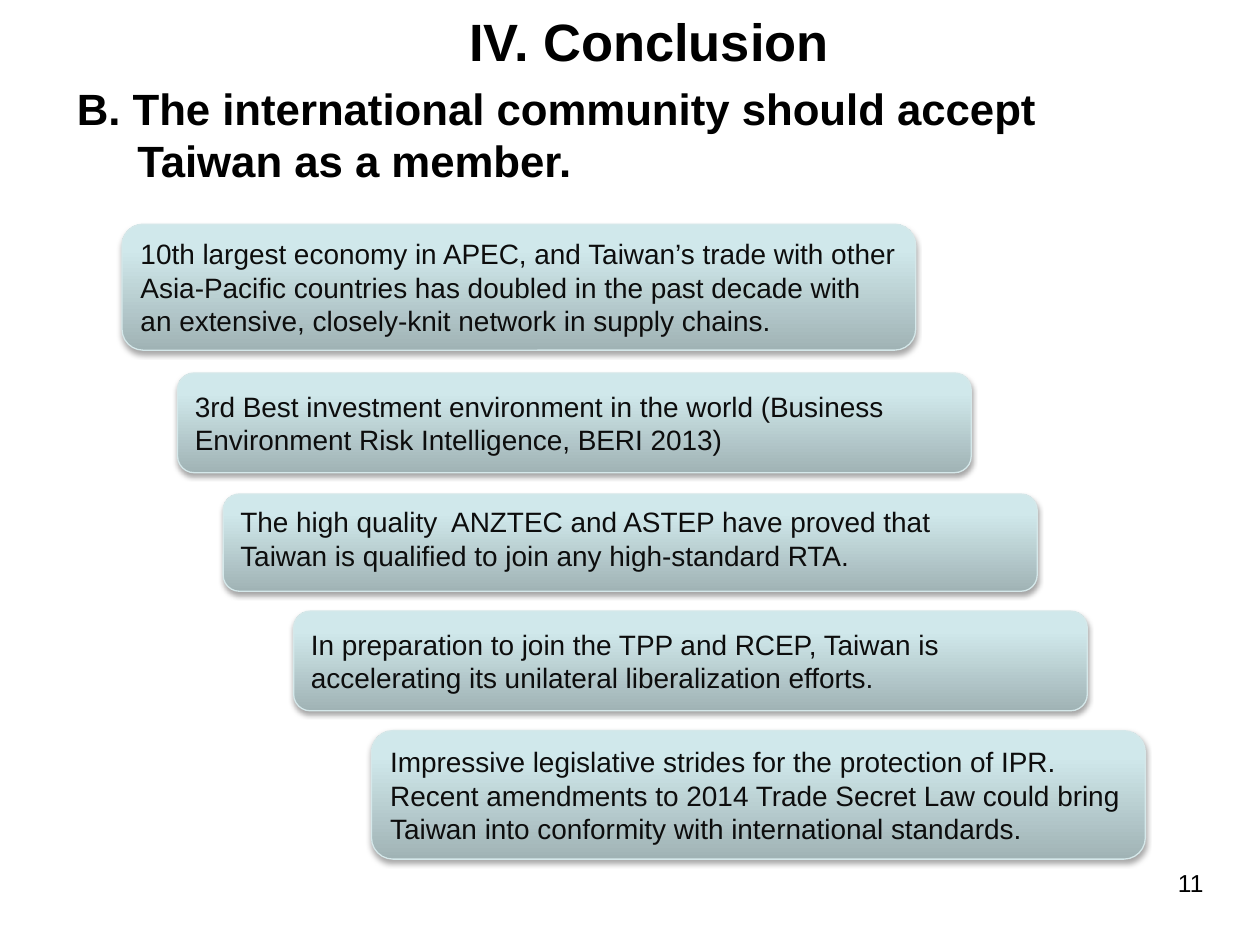
from copy import deepcopy
from dataclasses import dataclass

from lxml import etree
from pptx import Presentation
from pptx import util as u
from pptx.dml.color import RGBColor
from pptx.enum import shapes, text
from pptx.oxml.ns import qn


@dataclass(frozen=True)
class Theme:
    font: str = "Arial"
    ink: str = "000000"
    card_ink: str = "0D0D0D"
    card_edge: str = "D5E8EA"
    card_stops: tuple = ((0, "A0B3B5"), (0.8, "D0E8EB"), (1, "D1EAEC"))
    shadow: str = "000000"
    title_size: int = 30
    heading_size: int = 25
    card_size: int = 16
    number_size: int = 14


THEME = Theme()
MIDDLE = text.MSO_ANCHOR.MIDDLE
TOP = text.MSO_ANCHOR.TOP

CARDS = [
    ((2.46, 4.52, 16, 2.54), MIDDLE,
     "10th largest economy in APEC, and Taiwan’s trade with other Asia-Pacific countries "
     "has doubled in the past decade with an extensive, closely-knit network in supply chains."),
    ((3.58, 7.52, 16, 2.01), MIDDLE,
     "3rd Best investment environment in the world (Business Environment Risk Intelligence, "
     "BERI 2013)"),
    ((4.5, 9.96, 16.41, 1.96), TOP,
     "The high quality  ANZTEC and ASTEP have proved that Taiwan is qualified to join any "
     "high-standard RTA."),
    ((5.92, 12.32, 16, 2.01), MIDDLE,
     "In preparation to join the TPP and RCEP, Taiwan is accelerating its unilateral "
     "liberalization efforts."),
    ((7.49, 14.73, 15.6, 2.59), MIDDLE,
     "Impressive legislative strides for the protection of IPR. Recent amendments to 2014 "
     "Trade Secret Law could bring Taiwan into conformity with international standards."),
]


def lengths(box):
    return [u.Cm(value) for value in box]


def write(para, words, size, color=THEME.ink, bold=False,
          align=text.PP_ALIGN.LEFT, indent=0):
    para.alignment = align
    if indent:
        para._p.get_or_add_pPr().set("marL", str(u.Cm(indent)))
    span = para.add_run()
    span.text = words
    span.font.name = THEME.font
    span.font.size = u.Pt(size)
    span.font.bold = bold
    span.font.color.rgb = RGBColor.from_string(color)


def text_frame(page, box):
    frame = page.shapes.add_textbox(*lengths(box)).text_frame
    frame.word_wrap = True
    return frame


def add_title(page, box):
    write(text_frame(page, box).paragraphs[0], "IV. Conclusion", THEME.title_size,
          bold=True, align=text.PP_ALIGN.CENTER)


def add_heading(page, box):
    frame = text_frame(page, box)
    write(frame.paragraphs[0], "B. The international community should accept",
          THEME.heading_size, bold=True)
    write(frame.add_paragraph(), "Taiwan as a member.",
          THEME.heading_size, bold=True, indent=1.22)


def add_page_number(page, box):
    write(text_frame(page, box).paragraphs[0], "11", THEME.number_size,
          align=text.PP_ALIGN.RIGHT)


def shade(shape):
    shape.fill.gradient()
    shape.fill.gradient_angle = 90
    stop_list = shape._element.spPr.find(qn("a:gradFill")).find(qn("a:gsLst"))
    stop_list.append(deepcopy(stop_list[-1]))
    for stop, (position, color) in zip(shape.fill.gradient_stops, THEME.card_stops):
        stop.position = position
        stop.color.rgb = RGBColor.from_string(color)


def cast_shadow(shape):
    shape.shadow.inherit = False
    effects = shape._element.spPr.find(qn("a:effectLst"))
    shadow = etree.SubElement(effects, qn("a:outerShdw"), blurRad=str(u.Pt(3.1)),
                              dist=str(u.Pt(1.8)), dir="5400000", rotWithShape="0")
    color = etree.SubElement(shadow, qn("a:srgbClr"), val=THEME.shadow)
    etree.SubElement(color, qn("a:alpha"), val="35000")


def add_card(page, box, anchor, words):
    card = page.shapes.add_shape(shapes.MSO_SHAPE.ROUNDED_RECTANGLE, *lengths(box))
    shade(card)
    card.line.color.rgb = RGBColor.from_string(THEME.card_edge)
    card.line.width = u.Pt(0.75)
    cast_shadow(card)
    frame = card.text_frame
    frame.word_wrap = True
    frame.vertical_anchor = anchor
    write(frame.paragraphs[0], words, THEME.card_size, color=THEME.card_ink)


def main():
    deck = Presentation()
    deck.slide_width, deck.slide_height = u.Cm(25.4), u.Cm(19.05)
    page = deck.slides.add_slide(deck.slide_layouts[6])
    add_page_number(page, (18.59, 17.37, 5.92, 1.32))
    add_heading(page, (1.3, 1.52, 23.01, 2.39))
    add_title(page, (3.58, 0.05, 19.02, 1.55))
    for box, anchor, words in CARDS:
        add_card(page, box, anchor, words)
    deck.save("out.pptx")


if __name__ == "__main__":
    main()
